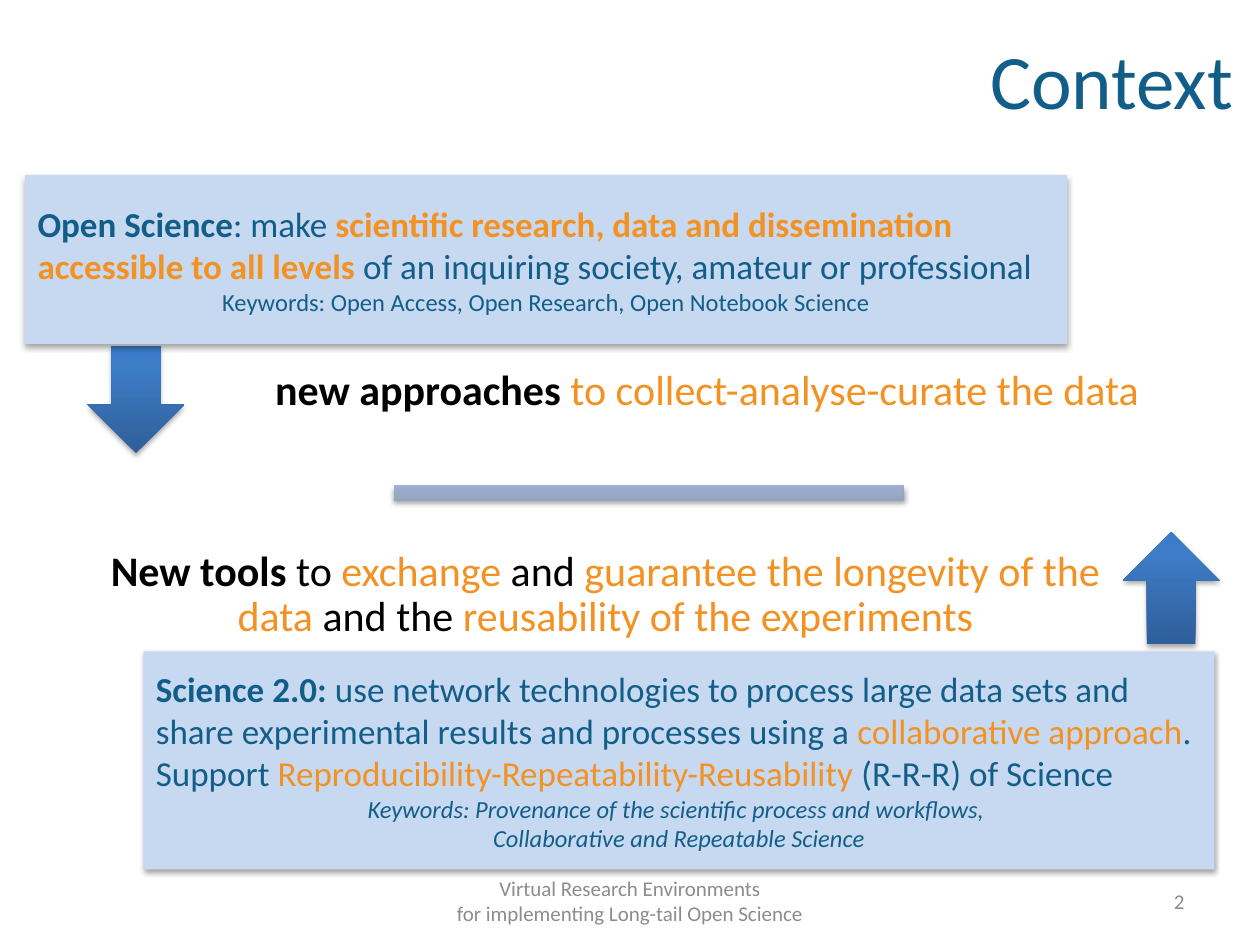
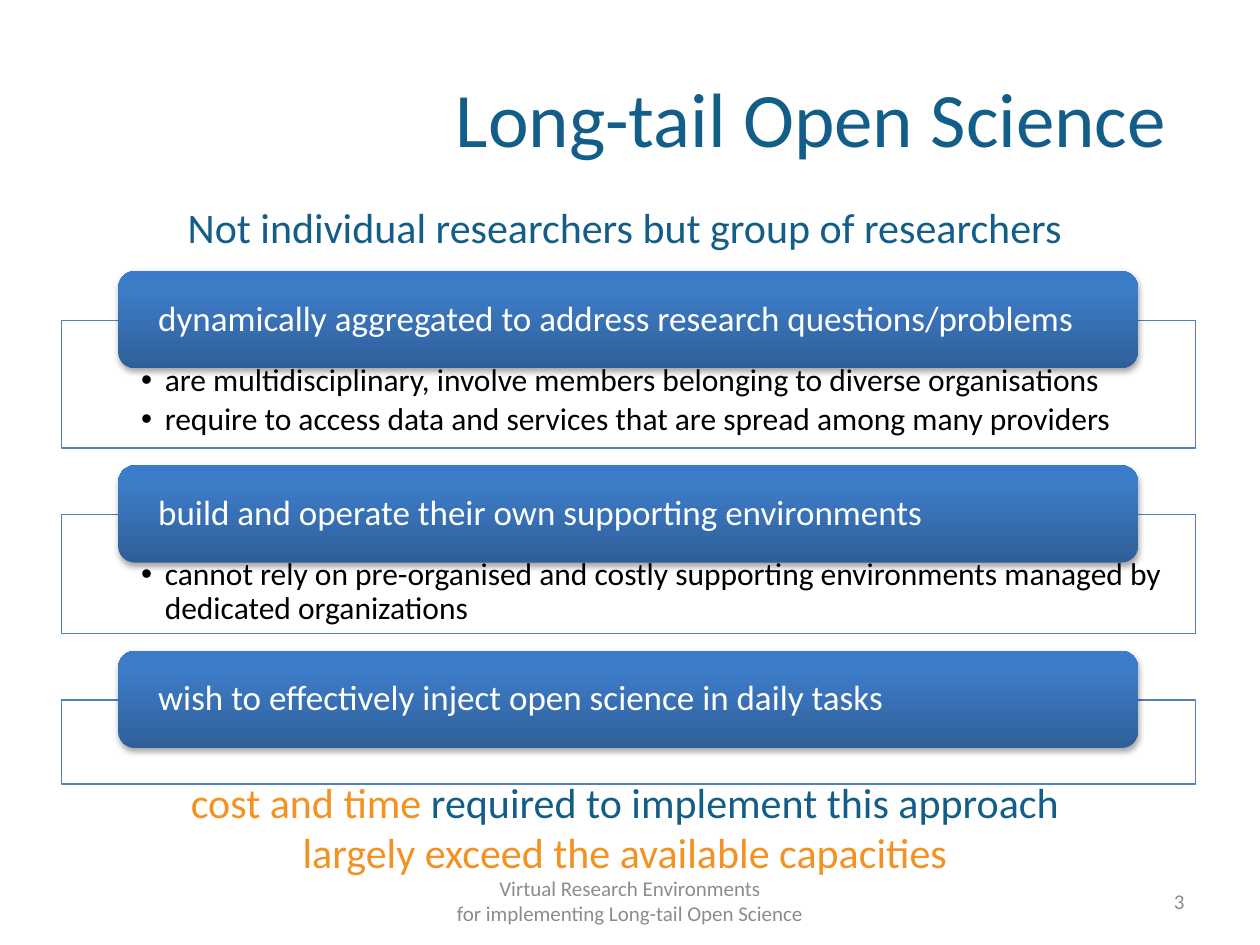
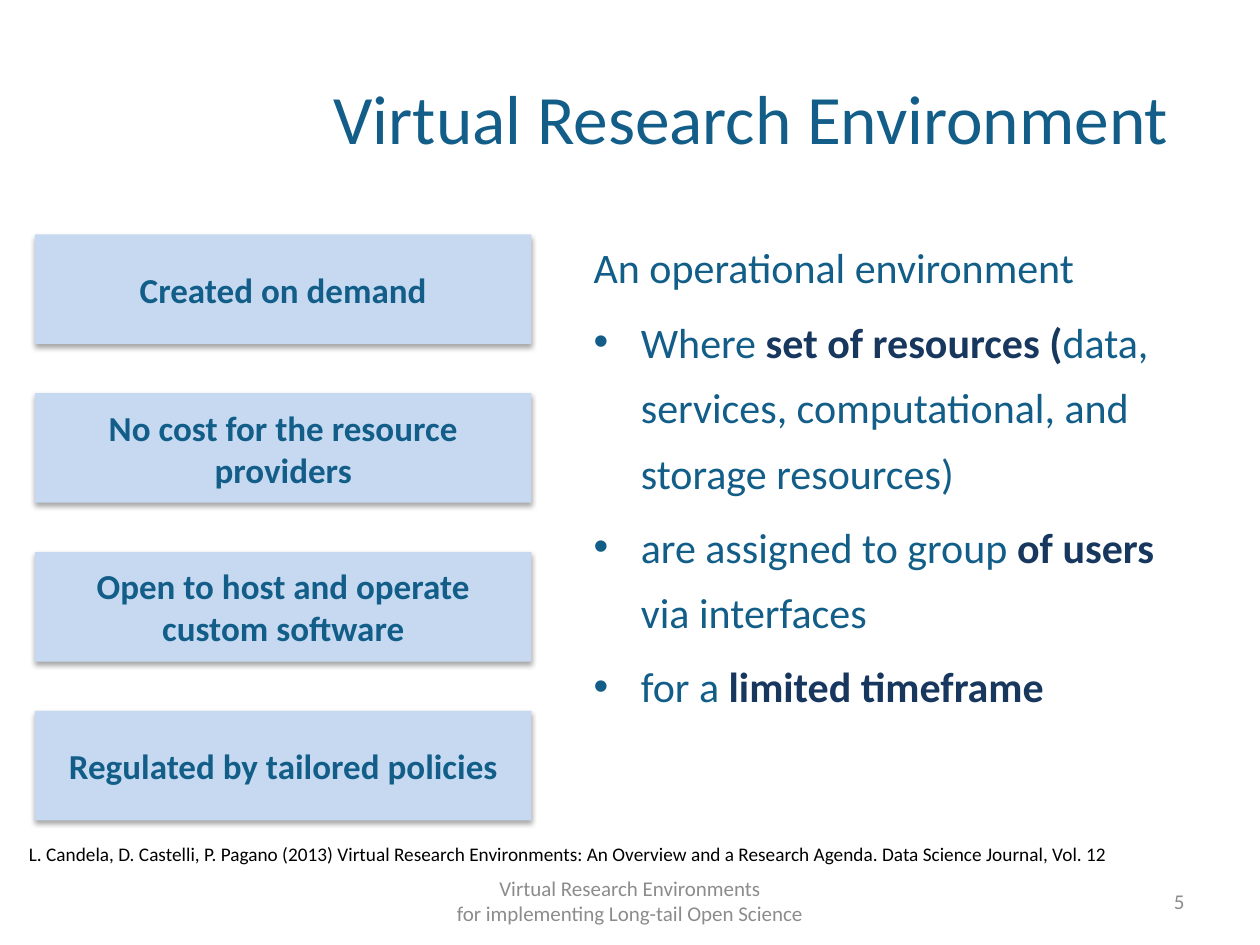
import copy
import dataclasses

import lxml.etree
import pptx
import pptx.dml.color
import pptx.enum.shapes
import pptx.enum.text
import pptx.oxml.ns
import pptx.util

Pt = pptx.util.Pt
SHAPE = pptx.enum.shapes.MSO_SHAPE
ALIGN = pptx.enum.text.PP_ALIGN
ANCHOR = pptx.enum.text.MSO_ANCHOR
qn = pptx.oxml.ns.qn


@dataclasses.dataclass(frozen=True)
class Theme:
    font: str = "Calibri"
    teal: str = "125E89"
    orange: str = "F39223"
    navy: str = "17375E"
    black: str = "000000"
    white: str = "FFFFFF"
    grey: str = "8C8C8C"
    panel: str = "C6D9F1"
    outline: str = "4F81BD"
    blue_gradient: tuple = ((0, "2F5F99"), (0.8, "3D7CC7"), (1, "3A7CCB"))
    pale_gradient: tuple = ((0, "818FA8"), (0.8, "A7B9DA"), (1, "A7BADC"))
    title: float = 44
    long_title: float = 39.6
    lead: float = 24
    text: float = 20
    detail: float = 18
    keywords: float = 14
    footer: float = 12
    citation: float = 11


THEME = Theme()


@dataclasses.dataclass(frozen=True)
class Box:
    left: float
    top: float
    width: float
    height: float

    def region(self, left, top, width, height):
        return Box(self.left + left, self.top + top, width, height)

    def lengths(self):
        return [Pt(value) for value in (self.left, self.top, self.width, self.height)]


@dataclasses.dataclass(frozen=True)
class Line:
    runs: tuple
    size: float = THEME.text
    colour: str = THEME.teal
    bold: bool = False
    italic: bool = False
    align: int = ALIGN.LEFT
    spacing: float = 1.0
    before: float = 0
    after: float = 0
    hanging: float = 0


PAGE = Box(0, 0, 720, 540)
TITLE = Box(168, 21.6, 516, 90)


def rgb(colour):
    return pptx.dml.color.RGBColor.from_string(colour)


def set_bullet(paragraph, hanging):
    properties = paragraph._p.get_or_add_pPr()
    properties.set("marL", str(Pt(hanging)))
    properties.set("indent", str(-Pt(hanging)))
    if hanging:
        lxml.etree.SubElement(properties, qn("a:buFont"), typeface="Arial")
        lxml.etree.SubElement(properties, qn("a:buChar"), char="•")
    else:
        lxml.etree.SubElement(properties, qn("a:buNone"))


def write(frame, lines, anchor=ANCHOR.MIDDLE, margins=(7.2, 3.6, 7.2, 3.6)):
    frame.word_wrap = True
    frame.auto_size = pptx.enum.text.MSO_AUTO_SIZE.NONE
    frame.vertical_anchor = anchor
    (frame.margin_left, frame.margin_top,
     frame.margin_right, frame.margin_bottom) = [Pt(margin) for margin in margins]
    for index, line in enumerate(lines):
        paragraph = frame.add_paragraph() if index else frame.paragraphs[0]
        set_bullet(paragraph, line.hanging)
        paragraph.alignment = line.align
        paragraph.line_spacing = line.spacing
        paragraph.space_before = Pt(line.before if index else 0)
        paragraph.space_after = Pt(line.after)
        font = paragraph.font
        font.name, font.size = THEME.font, Pt(line.size)
        font.bold, font.italic = line.bold, line.italic
        font.color.rgb = rgb(line.colour)
        for words, colour, bold in line.runs:
            run = paragraph.add_run()
            run.text = words
            if colour:
                run.font.color.rgb = rgb(colour)
            if bold:
                run.font.bold = True


def plain(words, **style):
    return Line(((words, None, False),), **style)


def add_text(slide, box, lines, **layout):
    write(slide.shapes.add_textbox(*box.lengths()).text_frame, lines, **layout)


def add_block(slide, kind, box, fill=None, gradient=None):
    block = slide.shapes.add_shape(kind, *box.lengths())
    block.line.fill.background()
    if gradient:
        block.fill.gradient()
        block.fill.gradient_angle = 90
        stops = block._element.spPr.find(".//" + qn("a:gsLst"))
        stops.append(copy.deepcopy(stops[-1]))
        for stop, (position, colour) in zip(block.fill.gradient_stops, gradient):
            stop.position = position
            stop.color.rgb = rgb(colour)
    else:
        block.fill.solid()
        block.fill.fore_color.rgb = rgb(fill)
    block.shadow.inherit = False
    return block


def add_raised(slide, kind, box, **paint):
    block = add_block(slide, kind, box, **paint)
    effects = block._element.spPr.find(qn("a:effectLst"))
    shadow = lxml.etree.SubElement(
        effects, qn("a:outerShdw"), blurRad=str(Pt(3.1)), dist=str(Pt(1.8)),
        dir="5400000", rotWithShape="0")
    colour = lxml.etree.SubElement(shadow, qn("a:srgbClr"), val=THEME.black)
    lxml.etree.SubElement(colour, qn("a:alpha"), val="35000")
    return block


def add_panel(slide, box, lines):
    panel = add_raised(slide, SHAPE.RECTANGLE, box, fill=THEME.panel)
    write(panel.text_frame, lines)


def place(placeholder, box):
    (placeholder.left, placeholder.top,
     placeholder.width, placeholder.height) = box.lengths()


def add_footer(slide, box, number):
    style = {"size": THEME.footer, "colour": THEME.grey}
    add_text(slide, box.region(246, 0, 228, box.height), [
        plain("Virtual Research Environments", align=ALIGN.CENTER, **style),
        plain("for implementing Long-tail Open Science", align=ALIGN.CENTER, **style)])
    add_text(slide, box.region(516, 0, 168, box.height),
             [plain(str(number), align=ALIGN.RIGHT, **style)])


def start_slide(deck, layout, heading, number, box=TITLE, size=THEME.title):
    slide = deck.slides.add_slide(deck.slide_layouts.get_by_name(layout))
    place(slide.shapes.title, box)
    write(slide.shapes.title.text_frame, [plain(heading, size=size, align=ALIGN.RIGHT)])
    add_footer(slide, PAGE.region(0, 500.4, PAGE.width, 28.8), number)
    return slide


def add_approaches(slide, box):
    centred = {"size": THEME.lead, "colour": THEME.black,
               "align": ALIGN.CENTER, "spacing": 0.9}
    blue = {"gradient": THEME.blue_gradient}
    add_raised(slide, SHAPE.MATH_MINUS, box.region(124.5, 66.5, 396.5, 34.5),
               gradient=THEME.pale_gradient)
    add_raised(slide, SHAPE.DOWN_ARROW, box.region(2, 0, 55.5, 61), **blue)
    add_raised(slide, SHAPE.UP_ARROW, box.region(593.5, 106, 55.5, 64), **blue)
    add_text(slide, box.region(63, 1, 586, 49.5), [Line((
        ("new approaches ", None, True),
        ("to collect-analyse-curate the data", THEME.orange, False)), **centred)],
        margins=(0, 0, 0, 0))
    add_text(slide, box.region(0, 117.5, 596, 49.5), [Line((
        ("New tools ", None, True),
        ("to ", None, False),
        ("exchange ", THEME.orange, False),
        ("and", None, False),
        (" guarantee the longevity of the data ", THEME.orange, False),
        ("and the ", None, False),
        ("reusability of the experiments", THEME.orange, False)), **centred)],
        margins=(0, 0, 0, 0))


def build_context(deck):
    slide = start_slide(deck, "Title Only", "Context", 2, box=Box(196, 0, 516, 90))
    add_approaches(slide, PAGE.region(48, 198, 650, 170))
    keywords = {"size": THEME.keywords, "align": ALIGN.CENTER}
    add_panel(slide, PAGE.region(14.4, 100, 595.5, 96.5), [
        Line((
            ("Open Science", None, True),
            (": make ", None, False),
            ("scientific research, data and dissemination accessible to all levels ",
             THEME.orange, True),
            ("of an inquiring society, amateur or professional", None, False))),
        plain("Keywords: Open Access, Open Research, Open Notebook Science", **keywords)])
    add_panel(slide, PAGE.region(82, 372.2, 612, 124.6), [
        Line((
            ("Science 2.0: ", None, True),
            ("use network technologies to process large data sets and share "
             "experimental results and processes using a ", None, False),
            ("collaborative approach", THEME.orange, False),
            (". Support ", None, False),
            ("Reproducibility-Repeatability-Reusability ", THEME.orange, False),
            ("(R-R-R) of Science", None, False))),
        plain("Keywords: Provenance of the scientific process and workflows, ",
              italic=True, **keywords),
        plain("Collaborative and Repeatable Science", italic=True, **keywords)])


def add_group_trait(slide, box, trait, details):
    frame = add_block(slide, SHAPE.RECTANGLE, box, fill=THEME.white)
    fill_colour = frame._element.spPr.find(qn("a:solidFill"))[0]
    lxml.etree.SubElement(fill_colour, qn("a:alpha"), val="90000")
    frame.line.color.rgb = rgb(THEME.outline)
    frame.line.width = Pt(0.75)
    if details:
        write(frame.text_frame,
              [plain(detail, size=THEME.detail, colour=THEME.black, spacing=0.9,
                     after=3, hanging=13.5) for detail in details],
              anchor=ANCHOR.TOP, margins=(45.4, 25, 3, 4.3))
    bar = add_raised(slide, SHAPE.ROUNDED_RECTANGLE, box.region(32.4, -28, 582.5, 55.5),
                     gradient=THEME.blue_gradient)
    write(bar.text_frame, [plain(trait, colour=THEME.white, spacing=0.9)],
          margins=(20, 0, 20, 0))


def add_group_traits(slide, box, traits):
    bar_rise, gap = 28, 10
    top = bar_rise
    for height, trait, details in traits:
        add_group_trait(slide, box.region(0, top, box.width, height), trait, details)
        top += height + gap + bar_rise


def build_long_tail(deck):
    slide = start_slide(deck, "Title Only", "Long-tail Open Science ", 3)
    add_group_traits(slide, PAGE.region(35.3, 155, 648, 293), [
        (73, "dynamically aggregated to address research questions/problems", [
            "are multidisciplinary, involve members belonging to diverse organisations",
            "require to access data and services that are spread among many providers"]),
        (68, "build and operate their own supporting environments", [
            "cannot rely on pre-organised and costly supporting environments managed "
            "by dedicated organizations"]),
        (48, "wish to effectively inject open science in daily tasks", [])])
    lead = {"size": THEME.lead, "align": ALIGN.CENTER}
    add_text(slide, PAGE.region(42.5, 440, 629.3, 65.5), [
        Line((("cost and time ", THEME.orange, False),
              ("required to implement this approach", None, False)), **lead),
        plain("largely exceed the available capacities", colour=THEME.orange, **lead)],
        anchor=ANCHOR.TOP)
    add_text(slide, PAGE.region(42.5, 111.6, 629.3, 36),
             [plain("Not individual researchers but group of researchers", **lead)],
             anchor=ANCHOR.TOP)


def add_feature_stack(slide, box, features):
    height = 62.6
    pitch = (box.height - height) / (len(features) - 1)
    for index, feature in enumerate(features):
        add_panel(slide, box.region(0, index * pitch, box.width, height),
                  [plain(feature, bold=True, align=ALIGN.CENTER)])


def fill_definition(placeholder, box):
    place(placeholder, box)
    style = {"size": THEME.lead, "spacing": 1.3, "before": 5}
    points = [
        (("Where ", None, False),
         ("set of resources (", THEME.navy, True),
         ("data, services, computational, and storage resources)", None, False)),
        (("are assigned to group ", None, False),
         ("of users ", THEME.navy, True),
         ("via interfaces", None, False)),
        (("for a ", None, False),
         ("limited timeframe", THEME.navy, True))]
    write(placeholder.text_frame,
          [plain("An operational environment", **style)]
          + [Line(point, hanging=27, **style) for point in points],
          anchor=ANCHOR.TOP)


def build_environment(deck):
    slide = start_slide(deck, "Title and Content", "Virtual Research Environment ", 5,
                        size=THEME.long_title)
    fill_definition(slide.placeholders[1], PAGE.region(332, 126, 352, 320))
    add_text(slide, PAGE.region(9.4, 478, 705.6, 21), [plain(
        "L. Candela, D. Castelli, P. Pagano (2013) Virtual Research Environments: "
        "An Overview and a Research Agenda. Data Science Journal, Vol. 12",
        size=THEME.citation, colour=THEME.black)], anchor=ANCHOR.TOP)
    add_feature_stack(slide, PAGE.region(20, 134, 283.7, 334.8), [
        "Created on demand",
        "No cost for the resource providers",
        "Open to host and operate custom software",
        "Regulated by tailored policies"])


def main():
    deck = pptx.Presentation()
    deck.slide_width, deck.slide_height = Pt(PAGE.width), Pt(PAGE.height)
    build_context(deck)
    build_long_tail(deck)
    build_environment(deck)
    deck.save("out.pptx")


if __name__ == "__main__":
    main()
